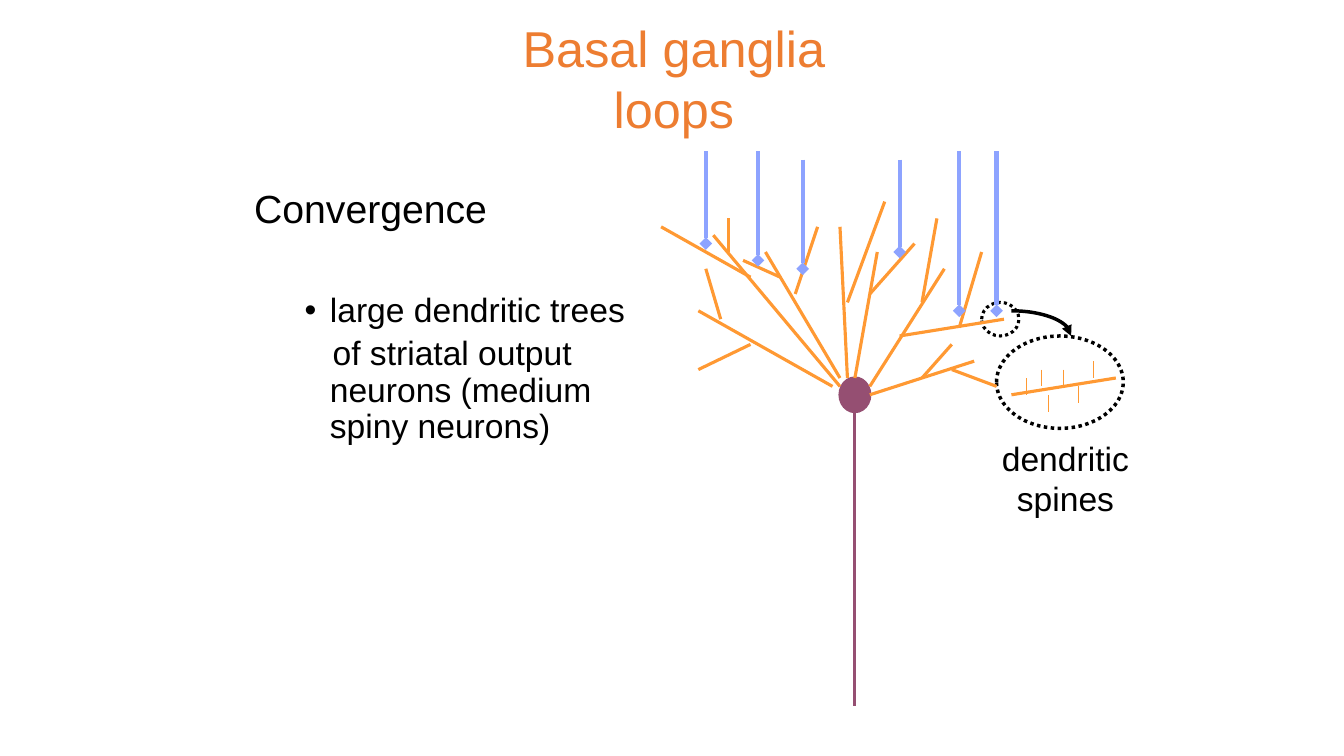
"""Build the basal ganglia slide with its neuron drawn on a regular grid."""
from dataclasses import dataclass
from math import cos, pi, sin

from lxml import etree
from pptx import Presentation
from pptx.dml.color import RGBColor
from pptx.enum.dml import MSO_LINE
from pptx.enum.shapes import MSO_CONNECTOR, MSO_SHAPE
from pptx.enum.text import MSO_ANCHOR, MSO_AUTO_SIZE, PP_ALIGN
from pptx.oxml.ns import qn
from pptx.util import Cm, Pt

STRAIGHT = MSO_CONNECTOR.STRAIGHT
OVAL = MSO_SHAPE.OVAL
DOTTED = MSO_LINE.ROUND_DOT
CENTER = PP_ALIGN.CENTER
TOP, MIDDLE = MSO_ANCHOR.TOP, MSO_ANCHOR.MIDDLE
NO_AUTOFIT = MSO_AUTO_SIZE.NONE

COLORS = {
    "title": "ED7D31",
    "text": "000000",
    "dendrite": "FF9933",
    "soma": "954F72",
    "input": "8DA3FF",
}
FONT = "Arial"
GRID_LEFT, GRID_TOP = 16.66, 3.81
COLUMN_STEP, ROW_STEP = 11.46 / 61, 2.54 / 12
SPINE_ROWS = 2
ARC_STEPS = 24


@dataclass(frozen=True)
class Stroke:
    start: tuple[float, float]
    end: tuple[float, float]
    color: str = "dendrite"
    width: float = 2.25
    tip: str = ""


@dataclass(frozen=True)
class Oval:
    start: tuple[float, float]
    end: tuple[float, float]
    color: str = "text"
    width: float = 2.25
    filled: bool = False


@dataclass(frozen=True)
class BodyLine:
    text: str
    size: float
    level: int
    margin: float
    indent: float
    before: float
    bullet: str = ""


DENDRITES = [
    Stroke((47, 29), (61, 27)),
    Stroke((0, 9), (12, 15)),
    Stroke((29, 12), (26, 27)),
    Stroke((28, 28), (38, 14)),
    Stroke((24, 27), (14, 12)),
    Stroke((23, 28), (5, 19)),
    Stroke((5, 26), (12, 23)),
    Stroke((32, 22), (46, 20)),
    Stroke((40, 21), (43, 12)),
    Stroke((7, 10), (24, 28)),
    Stroke((25, 27), (24, 9)),
    Stroke((28, 29), (42, 25)),
    Stroke((35, 27), (39, 23)),
    Stroke((39, 26), (45, 28)),
    Stroke((28, 17), (34, 11)),
    Stroke((18, 17), (21, 9)),
    Stroke((16, 15), (11, 13)),
    Stroke((8, 20), (6, 14)),
    Stroke((9, 12), (9, 8)),
    Stroke((25, 18), (30, 6)),
    Stroke((35, 18), (37, 8)),
]
SPINE_TOPS = [(58, 25), (56, 28), (54, 26), (52, 29), (51, 26), (49, 27)]
SPINES = [Stroke((column, row), (column, row + SPINE_ROWS), width=1) for column, row in SPINE_TOPS]
INPUT_SPANS = [(6, 0, 11), (13, 0, 13), (19, 1, 14), (32, 1, 12), (45, 0, 19), (40, 0, 19)]
INPUTS = [
    Stroke((column, top), (column, bottom), "input", 3, "diamond")
    for column, top, bottom in INPUT_SPANS
]
AXON = Stroke((26, 28), (26, 66), "soma")
OVALS = [
    Oval((45, 22), (62, 33), width=2.5),
    Oval((43, 18), (48, 22)),
    Oval((24, 27), (28, 31), "soma", filled=True),
]
BODY_LINES = [
    BodyLine("Convergence", 28, 0, 0.64, -0.64, 0),
    BodyLine("large dendritic trees", 24, 1, 1.91, -0.64, 44, "•"),
    BodyLine("of striatal output neurons (medium spiny neurons)", 24, 1, 1.91, 0.07, 5),
]


def grid_point(column: float, row: float) -> tuple[Cm, Cm]:
    """Return the slide position of a grid point."""
    return Cm(GRID_LEFT + column * COLUMN_STEP), Cm(GRID_TOP + row * ROW_STEP)


def style_line(shape, color: str, width: float, tip: str = "") -> None:
    """Set the outline of a shape and an optional tip at its end."""
    shape.line.color.rgb = RGBColor.from_string(COLORS[color])
    shape.line.width = Pt(width)
    if tip:
        outline = shape._element.spPr.find(qn("a:ln"))
        etree.SubElement(outline, qn("a:tailEnd"), type=tip)


def draw_stroke(page, stroke: Stroke) -> None:
    """Draw one straight line between grid points."""
    line = page.shapes.add_connector(
        STRAIGHT, *grid_point(*stroke.start), *grid_point(*stroke.end)
    )
    style_line(line, stroke.color, stroke.width, stroke.tip)
    etree.SubElement(line._element.spPr, qn("a:effectLst"))


def draw_oval(page, oval: Oval) -> None:
    """Draw a filled cell body or a dotted marker."""
    left, top = grid_point(*oval.start)
    right, bottom = grid_point(*oval.end)
    shape = page.shapes.add_shape(OVAL, left, top, right - left, bottom - top)
    shape.shadow.inherit = False
    style_line(shape, oval.color, oval.width)
    if oval.filled:
        shape.fill.solid()
        shape.fill.fore_color.rgb = RGBColor.from_string(COLORS[oval.color])
    else:
        shape.fill.background()
        shape.line.dash_style = DOTTED


def draw_zoom_arrow(page) -> None:
    """Draw the quarter-ellipse arrow that leads to the enlarged spines."""
    angles = [pi / 2 * step / ARC_STEPS for step in range(ARC_STEPS + 1)]
    points = [grid_point(47 + 8 * sin(angle), 22 - 3 * cos(angle)) for angle in angles]
    builder = page.shapes.build_freeform(*points[0])
    builder.add_line_segments(points[1:], close=False)
    arrow = builder.convert_to_shape()
    arrow.shadow.inherit = False
    arrow.fill.background()
    style_line(arrow, "text", 2.5, "triangle")


def place(box, left: float, top: float, width: float, height: float) -> None:
    """Move and size a box, in centimetres."""
    box.left, box.top, box.width, box.height = Cm(left), Cm(top), Cm(width), Cm(height)


def set_font(para, size: float, color: str) -> None:
    """Set the font of a whole paragraph."""
    para.font.name = FONT
    para.font.size = Pt(size)
    para.font.color.rgb = RGBColor.from_string(COLORS[color])


def write_centered(box, lines: list[str], size: float, color: str) -> None:
    """Write centred lines that do not wrap."""
    frame = box.text_frame
    frame.text = "\n".join(lines)
    frame.word_wrap = False
    frame.auto_size = NO_AUTOFIT
    frame.vertical_anchor = MIDDLE
    for para in frame.paragraphs:
        para.alignment = CENTER
        set_font(para, size, color)


def write_body(box) -> None:
    """Write the heading and its list entry."""
    frame = box.text_frame
    frame.text = "\n".join(line.text for line in BODY_LINES)
    frame.word_wrap = True
    frame.auto_size = NO_AUTOFIT
    frame.vertical_anchor = TOP
    for para, line in zip(frame.paragraphs, BODY_LINES):
        para.level = line.level
        properties = para._p.get_or_add_pPr()
        properties.set("marL", str(Cm(line.margin)))
        properties.set("indent", str(Cm(line.indent)))
        if line.bullet:
            etree.SubElement(properties, qn("a:buFont"), typeface=FONT)
            etree.SubElement(properties, qn("a:buChar"), char=line.bullet)
        else:
            etree.SubElement(properties, qn("a:buNone"))
        para.line_spacing = 0.9
        para.space_before = Pt(line.before)
        set_font(para, line.size, "text")


def main() -> None:
    """Build and save the deck."""
    deck = Presentation()
    deck.slide_width, deck.slide_height = Cm(33.87), Cm(19.05)
    page = deck.slides.add_slide(deck.slide_layouts[1])
    title, body = page.placeholders
    place(title, 11.23, 1.07, 11.51, 1.78)
    write_centered(title, ["Basal ganglia loops"], 36, "title")
    place(body, 6.15, 4.65, 10.62, 11.43)
    write_body(body)
    for oval in OVALS:
        draw_oval(page, oval)
    for stroke in [AXON, *DENDRITES, *SPINES, *INPUTS]:
        draw_stroke(page, stroke)
    draw_zoom_arrow(page)
    label = page.shapes.add_textbox(Cm(24.97), Cm(10.9), Cm(3.76), Cm(2.31))
    write_centered(label, ["dendritic", "spines"], 24, "text")
    deck.save("out.pptx")


if __name__ == "__main__":
    main()
